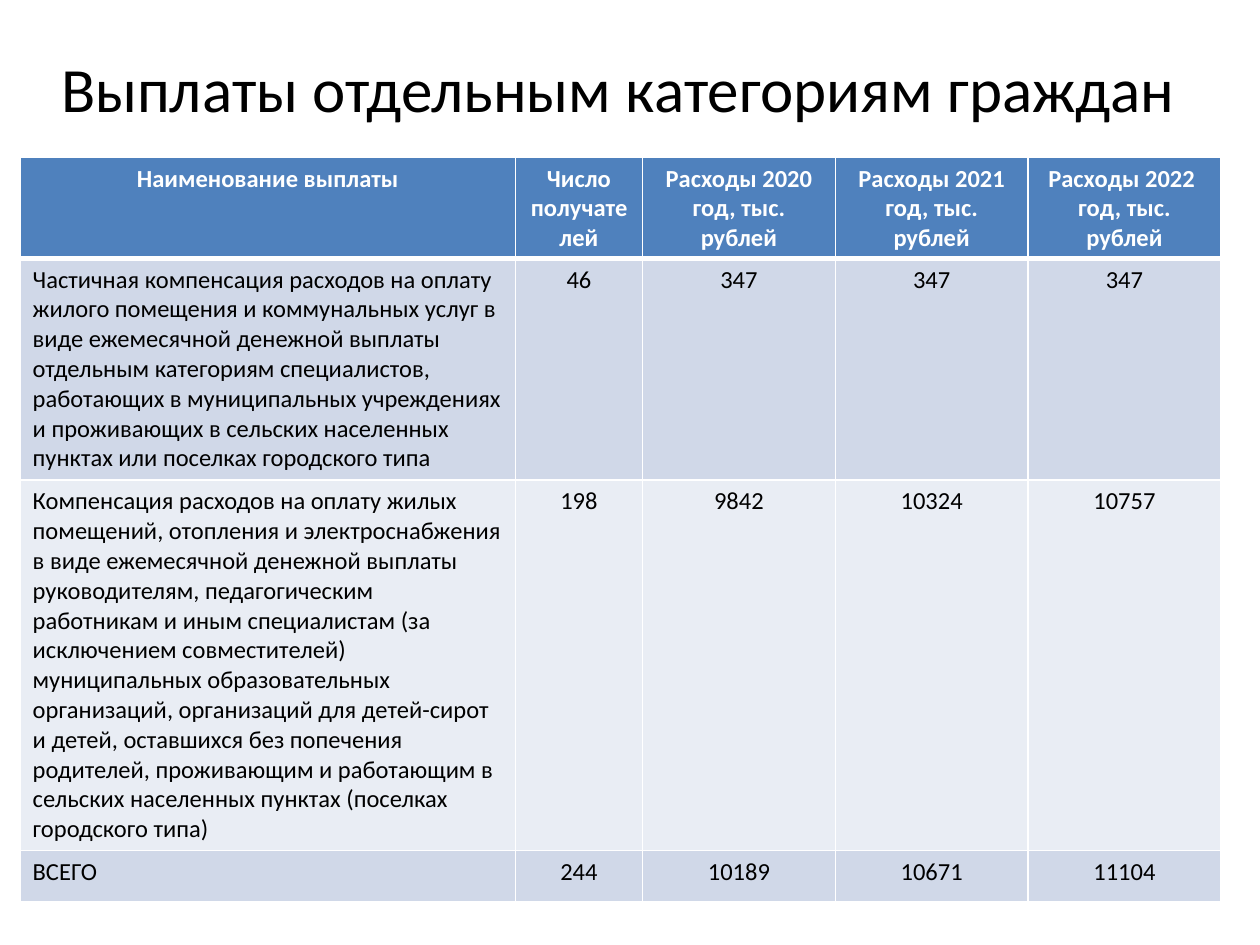
from lxml import etree
from pptx import Presentation
from pptx import util as u
from pptx.dml.color import RGBColor
from pptx.enum import text
from pptx.oxml import ns

BLACK = RGBColor(0x00, 0x00, 0x00)
WHITE = RGBColor(0xFF, 0xFF, 0xFF)
HEADER_BLUE = RGBColor(0x4F, 0x81, 0xBD)
BAND_DARK = RGBColor(0xD0, 0xD8, 0xE8)
BAND_LIGHT = RGBColor(0xE9, 0xED, 0xF4)

FONT = "Calibri"
COLUMN_WIDTHS = [3.93, 1.01, 1.53, 1.53, 1.53]
ROW_HEIGHTS = [0.8, 1.76, 2.94, 0.41]
PAYMENTS = [
    ["Наименование выплаты", "Число получателей", "Расходы 2020 год, тыс. рублей",
     "Расходы 2021 год, тыс. рублей", "Расходы 2022 \nгод, тыс. рублей"],
    ["Частичная компенсация расходов на оплату жилого помещения и коммунальных "
     "услуг в виде ежемесячной денежной выплаты отдельным категориям специалистов, "
     "работающих в муниципальных учреждениях и проживающих в сельских населенных "
     "пунктах или поселках городского типа", "46", "347", "347", "347"],
    ["Компенсация расходов на оплату жилых помещений, отопления и электроснабжения "
     "в виде ежемесячной денежной выплаты руководителям, педагогическим работникам "
     "и иным специалистам (за исключением совместителей) муниципальных "
     "образовательных организаций, организаций для детей-сирот и детей, оставшихся "
     "без попечения родителей, проживающим и работающим в сельских населенных "
     "пунктах (поселках городского типа)", "198", "9842", "10324", "10757"],
    ["ВСЕГО", "244", "10189", "10671", "11104"],
]


def write_text(text_frame, words, size, color, alignment, bold=False):
    text_frame.text = words
    for paragraph in text_frame.paragraphs:
        paragraph.alignment = alignment
        for run in paragraph.runs:
            run.font.name = FONT
            run.font.size = u.Pt(size)
            run.font.bold = bold
            run.font.color.rgb = color


def add_title(slide, words):
    shape = slide.shapes.add_textbox(u.Inches(0.31), u.Inches(0.3), u.Inches(9.19), u.Inches(0.79))
    shape.text_frame.word_wrap = True
    shape.text_frame.vertical_anchor = text.MSO_ANCHOR.MIDDLE
    write_text(shape.text_frame, words, 36, BLACK, text.PP_ALIGN.CENTER)


def set_borders(cell, widths):
    properties = cell._tc.get_or_add_tcPr()
    for side, width in widths.items():
        line = etree.SubElement(properties, ns.qn(f"a:ln{side}"), w=str(u.Pt(width)))
        fill = etree.SubElement(line, ns.qn("a:solidFill"))
        etree.SubElement(fill, ns.qn("a:srgbClr"), val=str(WHITE))


def format_cell(cell, words, row, column):
    header = row == 0
    set_borders(cell, {"L": 1, "R": 1, "T": 3 if row == 1 else 1, "B": 3 if header else 1})
    cell.fill.solid()
    cell.fill.fore_color.rgb = HEADER_BLUE if header else BAND_DARK if row % 2 else BAND_LIGHT
    centred = header or column > 0
    alignment = text.PP_ALIGN.CENTER if centred else text.PP_ALIGN.LEFT
    write_text(cell.text_frame, words, 14, WHITE if header else BLACK, alignment, header)


def add_payments_table(slide):
    frame = slide.shapes.add_table(
        len(PAYMENTS), len(COLUMN_WIDTHS), u.Inches(0.16), u.Inches(1.25),
        u.Inches(sum(COLUMN_WIDTHS)), u.Inches(sum(ROW_HEIGHTS)))
    table = frame.table
    for column, width in zip(table.columns, COLUMN_WIDTHS):
        column.width = u.Inches(width)
    for row, height in zip(table.rows, ROW_HEIGHTS):
        row.height = u.Inches(height)
    for row, payment in enumerate(PAYMENTS):
        for column, words in enumerate(payment):
            format_cell(table.cell(row, column), words, row, column)


def main():
    presentation = Presentation()
    presentation.slide_width = u.Inches(10)
    presentation.slide_height = u.Inches(7.5)
    slide = presentation.slides.add_slide(presentation.slide_layouts[6])
    add_title(slide, "Выплаты отдельным категориям граждан")
    add_payments_table(slide)
    presentation.save("out.pptx")


if __name__ == "__main__":
    main()
